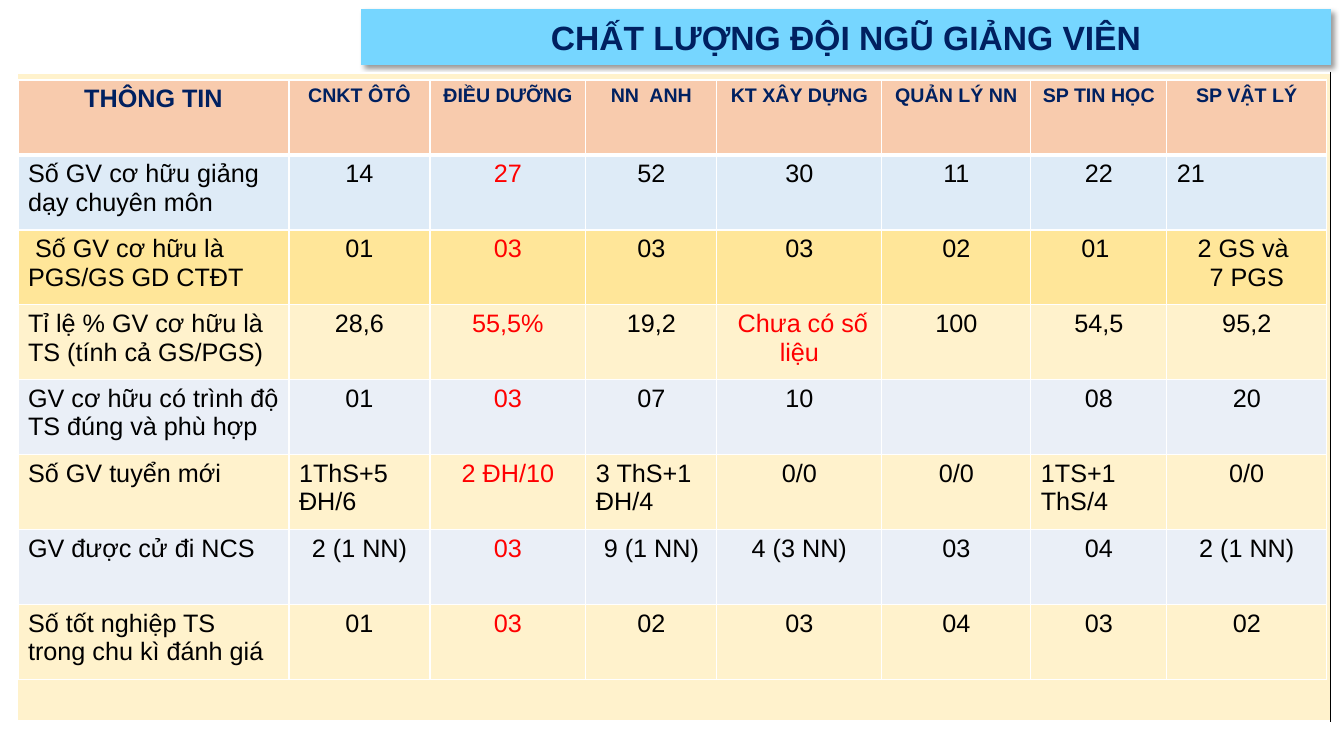
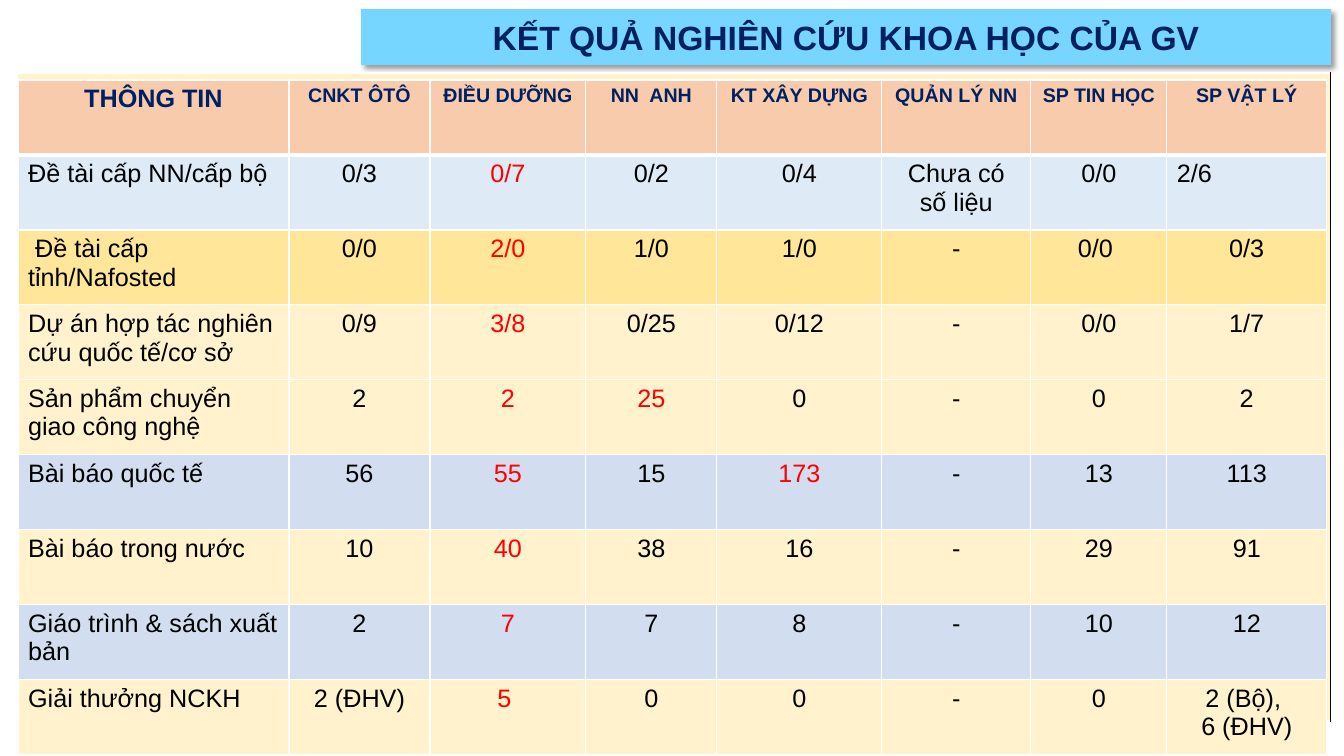
from lxml import etree
from pptx import Presentation
from pptx import util as u
from pptx.dml.color import RGBColor
from pptx.enum import text
from pptx.oxml import parse_xml
from pptx.oxml.ns import nsdecls, qn

PX = 914400 / 100.8
FONT = "Arial"
NAVY = RGBColor(0x00, 0x20, 0x60)
BLACK = RGBColor(0x00, 0x00, 0x00)
WHITE = RGBColor(0xFF, 0xFF, 0xFF)
RED = RGBColor(0xFF, 0x00, 0x00)
SKY = RGBColor(0x76, 0xD6, 0xFF)
PEACH = RGBColor(0xF8, 0xCB, 0xAD)
CREAM = RGBColor(0xFF, 0xF2, 0xCC)
GOLD = RGBColor(0xFF, 0xE6, 0x99)
ICE = RGBColor(0xDE, 0xEB, 0xF7)
MIST = RGBColor(0xEA, 0xEF, 0xF7)
STEEL = RGBColor(0xD2, 0xDE, 0xEF)

COL_WIDTHS = [271, 141, 156, 131, 165, 149, 136, 160]
ROW_HEIGHT = 75
RED_COLUMN = 2
HEADER = ["THÔNG TIN", "CNKT ÔTÔ", "ĐIỀU DƯỠNG", "NN  ANH", "KT XÂY DỰNG",
          "QUẢN LÝ NN", "SP TIN HỌC", "SP VẬT LÝ"]

# "red" and "left" list (row, column) cells that depart from their column's style
SLIDES = [
    dict(
        title="CHẤT LƯỢNG ĐỘI NGŨ GIẢNG VIÊN",
        fills=[ICE, GOLD, CREAM, MIST, CREAM, MIST, CREAM],
        red={(3, 4)},
        left={(1, 7), (5, 1), (5, 3), (5, 6)},
        rows=[
            ["Số GV cơ hữu giảng dạy chuyên môn", "14", "27", "52", "30", "11", "22", "21"],
            [" Số GV cơ hữu là PGS/GS GD CTĐT", "01", "03", "03", "03", "02", "01 ",
             "2 GS và \n7 PGS"],
            ["Tỉ lệ % GV cơ hữu là TS (tính cả GS/PGS)", "28,6", "55,5%", "19,2",
             " Chưa có số liệu", "100", "54,5", "95,2"],
            ["GV cơ hữu có trình độ TS đúng và phù hợp", "01", "03", "07", "10", "", "08", "20"],
            ["Số GV tuyển mới", "1ThS+5 ĐH/6", "2 ĐH/10", "3 ThS+1 ĐH/4", "0/0", "0/0",
             "1TS+1 ThS/4", "0/0"],
            ["GV được cử đi NCS", "2 (1 NN)", "03", "9 (1 NN)", "4 (3 NN)", "03", "04",
             "2 (1 NN)"],
            ["Số tốt nghiệp TS trong chu kì đánh giá", "01", "03", "02", "03", "04", "03", "02"],
        ],
    ),
    dict(
        title="KẾT QUẢ NGHIÊN CỨU KHOA HỌC CỦA GV",
        fills=[ICE, GOLD, CREAM, CREAM, STEEL, CREAM, STEEL, CREAM],
        red={(4, 3), (5, 4)},
        left={(1, 7)},
        rows=[
            ["Đề tài cấp NN/cấp bộ", "0/3", "0/7", "0/2", "0/4", "Chưa có số liệu", "0/0", "2/6"],
            [" Đề tài cấp tỉnh/Nafosted", "0/0", "2/0", "1/0", "1/0", "-", "0/0 ", "0/3"],
            ["Dự án hợp tác nghiên cứu quốc tế/cơ sở", "0/9", "3/8", "0/25", "0/12", "-",
             "0/0", "1/7"],
            ["Sản phẩm chuyển giao công nghệ", "2", "2", "25", "0", "-", "0", "2"],
            ["Bài báo quốc tế", "56", "55", "15", "173", "-", "13", "113"],
            ["Bài báo trong nước", "10", "40", "38", "16", "-", "29", "91"],
            ["Giáo trình & sách xuất bản", "2", "7", "7", "8", "-", "10", "12"],
            ["Giải thưởng NCKH", "2 (ĐHV)", "5 ", "0", "0", "-", "0", "2 (Bộ), \n6 (ĐHV)"],
        ],
    ),
]


def style_text(tf, size, color, bold, align):
    for p in tf.paragraphs:
        p.alignment = align
        for r in p.runs:
            r.font.name = FONT
            r.font.size = u.Pt(size)
            r.font.bold = bold
            r.font.color.rgb = color


def style_cell(cell, fill, **borders):
    """Set the fill and the borders, given as L, R, T, B = (colour, points)."""
    tc_pr = cell._tc.get_or_add_tcPr()
    for side in "LRTB":
        color, width = borders[side]
        ln = etree.SubElement(tc_pr, qn("a:ln" + side), w=str(u.Pt(width)))
        solid = etree.SubElement(ln, qn("a:solidFill"))
        etree.SubElement(solid, qn("a:srgbClr"), val=str(color))
    cell.fill.solid()
    cell.fill.fore_color.rgb = fill


prs = Presentation()
prs.slide_width, prs.slide_height = round(1344 * PX), round(756 * PX)

for content in SLIDES:
    s = prs.slides.add_slide(prs.slide_layouts[5])

    # Title band
    sp = s.shapes.title
    sp.left, sp.top, sp.width, sp.height = [round(v * PX) for v in (361, 9, 970, 56)]
    sp.fill.solid()
    sp.fill.fore_color.rgb = SKY
    sp._element.spPr.append(parse_xml(
        f'<a:effectLst {nsdecls("a")}><a:outerShdw blurRad="{u.Pt(4)}" dist="{u.Pt(3)}" '
        'dir="2700000" algn="tl" rotWithShape="0"><a:srgbClr val="000000">'
        '<a:alpha val="40000"/></a:srgbClr></a:outerShdw></a:effectLst>'))
    tf = sp.text_frame
    tf.text = content["title"]
    tf.word_wrap = True
    tf.auto_size = text.MSO_AUTO_SIZE.NONE
    tf.vertical_anchor = text.MSO_ANCHOR.MIDDLE
    tf.margin_left = tf.margin_right = round(7 * PX)
    tf.margin_top = tf.margin_bottom = round(4 * PX)
    style_text(tf, 24, NAVY, True, text.PP_ALIGN.CENTER)

    # Cream panel behind the data
    panel = s.shapes.add_table(1, 1, *[round(v * PX) for v in (17, 73, 1313, 648)]).table
    panel.first_row = panel.horz_banding = False
    edge = (WHITE, 2.25)
    style_cell(panel.cell(0, 0), CREAM, L=edge, R=(BLACK, 0.5), T=edge, B=edge)

    # Data table
    rows = [HEADER] + content["rows"]
    fills = [PEACH] + content["fills"]
    box = (18, 80, sum(COL_WIDTHS), ROW_HEIGHT * len(rows))
    table = s.shapes.add_table(len(rows), len(HEADER), *[round(v * PX) for v in box]).table
    table.first_row = table.horz_banding = False
    for col, width in zip(table.columns, COL_WIDTHS):
        col.width = round(width * PX)
    for i, row in enumerate(rows):
        table.rows[i].height = round(ROW_HEIGHT * PX)
        for j, value in enumerate(row):
            cell = table.cell(i, j)
            thin = (WHITE, 1)
            style_cell(cell, fills[i], L=thin, R=thin,
                       T=(WHITE, 3) if i == 1 else thin,
                       B=(WHITE, 3) if i == 0 else thin)
            cell.text_frame.text = value
            if i == 0:
                size, color = 18 if j == 0 else 14, NAVY
            else:
                is_red = j == RED_COLUMN or (i, j) in content["red"]
                size, color = 18, RED if is_red else BLACK
            is_left = (i > 0 and j == 0) or (i, j) in content["left"]
            align = text.PP_ALIGN.LEFT if is_left else text.PP_ALIGN.CENTER
            style_text(cell.text_frame, size, color, i == 0, align)

prs.save("out.pptx")
